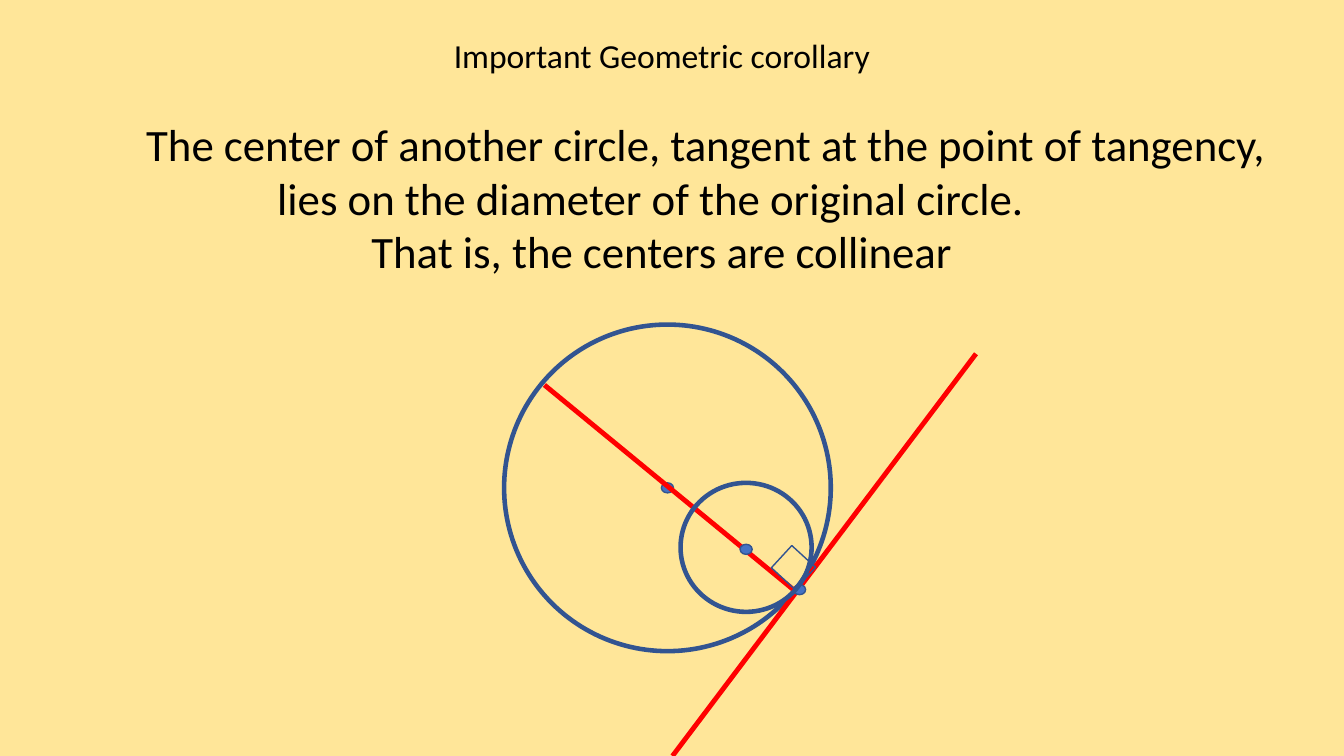
from pptx import Presentation
from pptx.dml.color import RGBColor
from pptx.enum.dml import MSO_LINE
from pptx.enum.shapes import MSO_CONNECTOR, MSO_SHAPE
from pptx.enum.text import MSO_ANCHOR, MSO_AUTO_SIZE, PP_ALIGN
from pptx.util import Inches, Pt
from lxml import etree

OVAL, RECT = MSO_SHAPE.OVAL, MSO_SHAPE.RECTANGLE
STRAIGHT = MSO_CONNECTOR.STRAIGHT
SOLID = MSO_LINE.SOLID
TOP, CENTER, FIXED = MSO_ANCHOR.TOP, PP_ALIGN.CENTER, MSO_AUTO_SIZE.NONE

SAND = RGBColor(0xFF, 0xE6, 0x99)
BLACK = RGBColor(0, 0, 0)
BLUE = RGBColor(0x44, 0x72, 0xC4)
NAVY = RGBColor(0x32, 0x54, 0x91)
RED = RGBColor(0xFF, 0, 0)
FONT = "Calibri"

# text, size, space before (points), left and right indent (inches)
LINES = [
    ("Important Geometric corollary", 24, 0, 0, 0),
    ("The center of another circle, tangent at the point of tangency,",
     32, 29.3, 0.88, 0),
    ("lies on the diameter of the original circle.", 32, 0, 0, 0.22),
    ("That is, the centers are collinear", 32, 0, 0, 0),
]

# centre x, centre y, width, height
BIG = (6.62, 4.84, 3.24, 3.24)
SMALL = (7.4, 5.43, 1.3, 1.28)
CORNER = (7.87, 5.63, 0.3, 0.32)
TURN = 312.6
DOT = (0.12, 0.1)
TOUCH, BIG_MID, SMALL_MID = (7.93, 5.85), (6.62, 4.84), (7.4, 5.45)
TANGENT = (9.68, 3.51, 6.67, 7.5)
DIAMETER = (5.4, 3.82, 7.87, 5.85)


def add_form(kind, x, y, w, h, weight, fill=None):
    """Add an outlined shape centred on x, y."""
    form = shapes.add_shape(kind, Inches(x - w / 2), Inches(y - h / 2),
                            Inches(w), Inches(h))
    form.shadow.inherit = False
    if fill is None:
        form.fill.background()
    else:
        form.fill.solid()
        form.fill.fore_color.rgb = fill
    form.line.color.rgb = NAVY
    form.line.width = Pt(weight)
    return form


def add_dot(spot):
    add_form(OVAL, *spot, *DOT, 1, BLUE)


def add_line(ends):
    line = shapes.add_connector(STRAIGHT, *[Inches(n) for n in ends])
    line.line.color.rgb = RED
    line.line.width = Pt(3.5)
    line.line.dash_style = SOLID
    props = line._element.spPr
    space = props.nsmap["a"]
    etree.SubElement(props, f"{{{space}}}effectLst")


def set_text(box):
    frame = box.text_frame
    frame.text = "\n".join(line[0] for line in LINES)
    frame.word_wrap = True
    frame.auto_size = FIXED
    frame.vertical_anchor = TOP
    for para, (_, size, before, left, right) in zip(frame.paragraphs, LINES):
        para.alignment = CENTER
        para.line_spacing = 1.0
        para.space_before = Pt(before)
        props = para._p.get_or_add_pPr()
        props.set("marL", str(Inches(left)))
        props.set("marR", str(Inches(right)))
        font = para.runs[0].font
        font.name, font.size = FONT, Pt(size)
        font.color.rgb = BLACK


deck = Presentation()
deck.slide_width, deck.slide_height = Inches(13.33), Inches(7.5)
slide = deck.slides.add_slide(deck.slide_layouts[5])
slide.background.fill.solid()
slide.background.fill.fore_color.rgb = SAND
shapes = slide.shapes

title = shapes.title
title.left, title.top = Inches(0.3), Inches(0.3)
title.width, title.height = Inches(12.53), Inches(2.93)
set_text(title)

add_form(OVAL, *BIG, 3.25)
add_line(TANGENT)
add_dot(TOUCH)
add_dot(BIG_MID)
add_line(DIAMETER)
add_form(OVAL, *SMALL, 3.25)
add_dot(SMALL_MID)
add_form(RECT, *CORNER, 1).rotation = TURN

deck.save("out.pptx")
